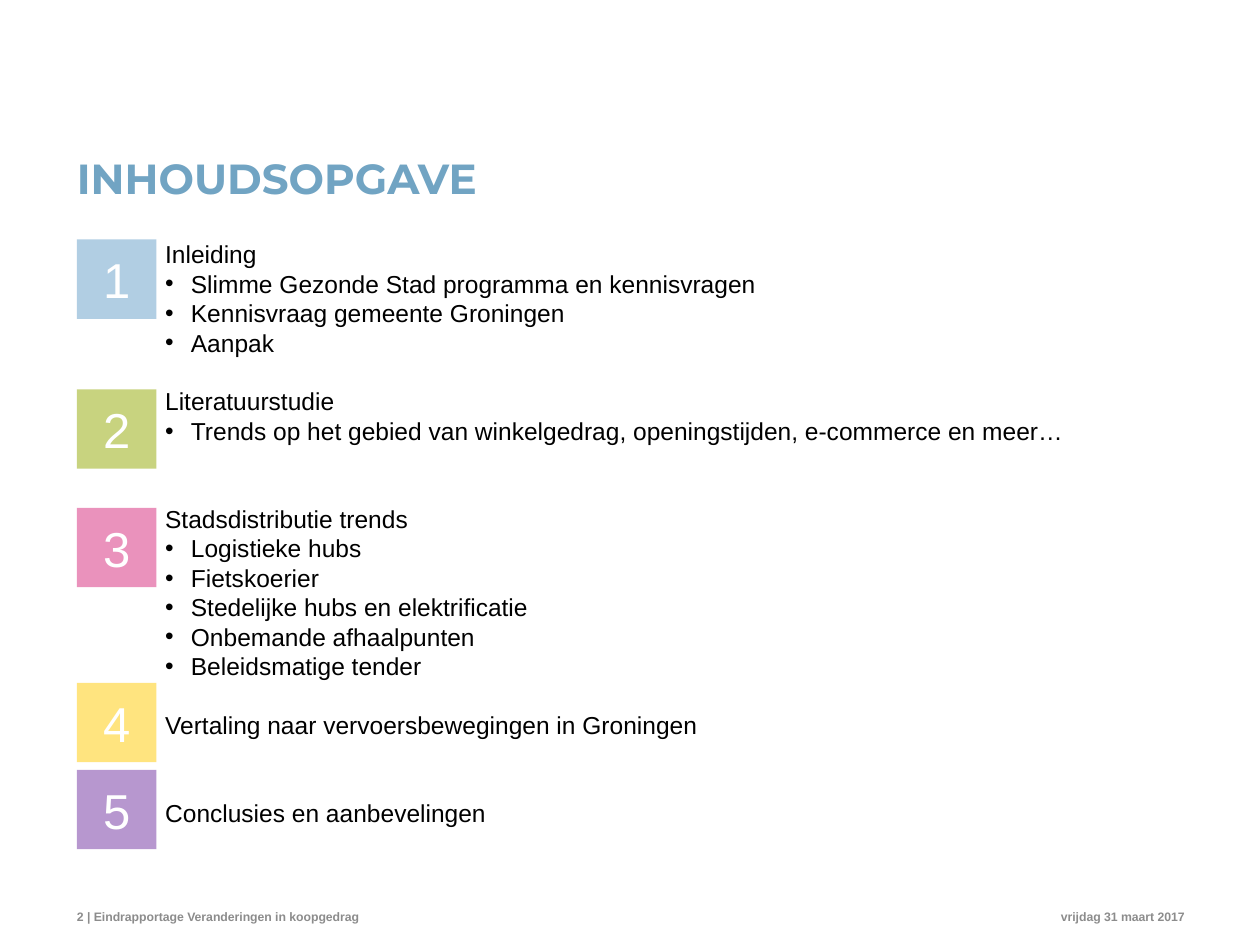
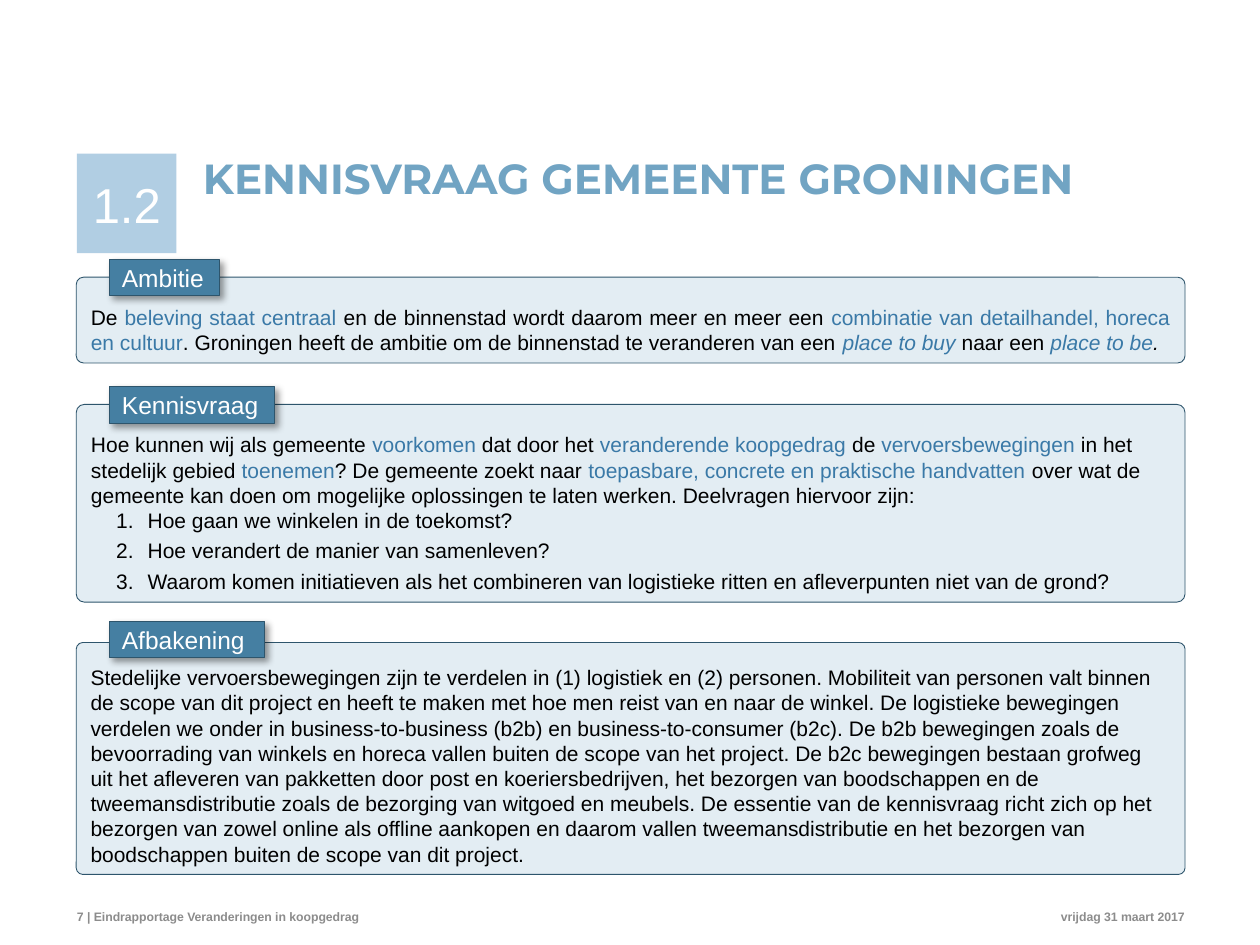
from pptx import Presentation
from pptx.dml.color import RGBColor
from pptx.enum.shapes import MSO_SHAPE
from pptx.enum.text import MSO_ANCHOR, MSO_AUTO_SIZE, PP_ALIGN
from pptx.oxml import parse_xml
from pptx.oxml.ns import nsdecls, qn
from pptx.util import Pt
from lxml.etree import SubElement

INK = {
    "title": "71A4C3", "text": "000000", "accent": "3A79A7", "foot": "8C8C8C",
    "white": "FFFFFF", "panel": "E3EDF3", "label": "457FA2", "edge": "2E556C",
    "blue": "649EC9", "green": "93A800", "pink": "D6277A",
    "yellow": "FFCB00", "purple": "7030A0",
}
LEFT, WIDTH, TOP = 44, 633.6, 87.8
LEAD = 1.2  # line pitch as a multiple of the text size

# Chapter: colour, top of its square, empty lines above, heading, bullets
PARTS = [
    ("blue", 136.8, 0, "Inleiding",
     ["Slimme Gezonde Stad programma en kennisvragen",
      "Kennisvraag gemeente Groningen", "Aanpak"]),
    ("green", 222.5, 1, "Literatuurstudie",
     ["Trends op het gebied van winkelgedrag, openingstijden, "
      "e-commerce en meer…"]),
    ("pink", 290.2, 2, "Stadsdistributie trends",
     ["Logistieke hubs", "Fietskoerier", "Stedelijke hubs en elektrificatie",
      "Onbemande afhaalpunten", "Beleidsmatige tender"]),
    ("yellow", 390.2, 1, "Vertaling naar vervoersbewegingen in Groningen", []),
    ("purple", 439.9, 2, "Conclusies en aanbevelingen", []),
]

# Sentences that set the scope of the project
SCOPE = [
    "Stedelijke vervoersbewegingen zijn te verdelen in (1) logistiek en (2) "
    "personen.",
    "Mobiliteit van personen valt binnen de scope van dit project en heeft te "
    "maken met hoe men reist van en naar de winkel.",
    "De logistieke bewegingen verdelen we onder in business-to-business (b2b) "
    "en business-to-consumer (b2c).",
    "De b2b bewegingen zoals de bevoorrading van winkels en horeca vallen "
    "buiten de scope van het project.",
    "De b2c bewegingen bestaan grofweg uit het afleveren van pakketten door "
    "post en koeriersbedrijven, het bezorgen van boodschappen en de "
    "tweemansdistributie zoals de bezorging van witgoed en meubels.",
    "De essentie van de kennisvraag richt zich op het bezorgen van zowel online "
    "als offline aankopen en daarom vallen tweemansdistributie en het bezorgen "
    "van boodschappen buiten de scope van dit project.",
]

# Panel: label, label width, label top, top, height, corner, align, text, questions
# In the text, | switches the accent colour on and off and ~ marks italics.
PANELS = [
    ("Ambitie", 62.6, 148.1, 158.4, 49, 0.085, PP_ALIGN.JUSTIFY,
     "De |beleving staat centraal |en de binnenstad wordt daarom meer en meer "
     "een |combinatie van detailhandel, horeca en cultuur|. Groningen heeft de "
     "ambitie om de binnenstad te veranderen van een |~place to buy |naar een "
     "|~place to be|~.", []),
    ("Kennisvraag", 94.3, 221, 231.1, 113, 0.041, PP_ALIGN.LEFT,
     "Hoe kunnen wij als gemeente |voorkomen| dat door het |veranderende "
     "koopgedrag |de |vervoersbewegingen| in het stedelijk gebied |toenemen|? "
     "De gemeente zoekt naar |toepasbare, concrete en praktische handvatten "
     "|over wat de gemeente kan doen om mogelijke oplossingen te laten werken. "
     "Deelvragen hiervoor zijn:",
     ["Hoe gaan we winkelen in de toekomst?",
      "Hoe verandert de manier van samenleven?",
      "Waarom komen initiatieven als het combineren van logistieke ritten en "
      "afleverpunten niet van de grond?"]),
    ("Afbakening", 88.6, 355, 367.2, 132.5, 0.028, PP_ALIGN.LEFT,
     " ".join(SCOPE), []),
]


def paint(name):
    return RGBColor.from_string(INK[name])


def style(run, size, ink="text", bold=False, slant=False, face="Arial"):
    font = run.font
    font.name, font.size, font.bold, font.italic = face, Pt(size), bold, slant
    font.color.rgb = paint(ink)


def write(para, text, size, ink="text", align=PP_ALIGN.LEFT, **look):
    para.text = text
    para.alignment = align
    for run in para.runs:
        style(run, size, ink, **look)


def next_para(frame):
    first = frame.paragraphs[0]
    return frame.add_paragraph() if first.runs else first


def mark(para, left, hang, tag, **attrs):
    """Give a paragraph a bullet or number with a hanging indent."""
    props = para._p.get_or_add_pPr()
    props.set("marL", str(Pt(left)))
    props.set("indent", str(-Pt(hang)))
    SubElement(props, qn("a:buFont"), typeface="Arial")
    SubElement(props, qn(tag), **attrs)


def plain(frame, anchor=MSO_ANCHOR.TOP):
    """Strip the margins of a text frame."""
    frame.margin_left = frame.margin_right = 0
    frame.margin_top = frame.margin_bottom = 0
    frame.word_wrap = True
    frame.auto_size = MSO_AUTO_SIZE.NONE
    frame.vertical_anchor = anchor


def text_box(slide, left, top, width, height, anchor=MSO_ANCHOR.TOP):
    box = slide.shapes.add_textbox(Pt(left), Pt(top), Pt(width), Pt(height))
    plain(box.text_frame, anchor)
    return box.text_frame


def block(shapes, kind, left, top, width, height, fill, edge=None):
    shape = shapes.add_shape(kind, Pt(left), Pt(top), Pt(width), Pt(height))
    shape.shadow.inherit = False
    shape.fill.solid()
    shape.fill.fore_color.rgb = paint(fill)
    if edge:
        shape.line.color.rgb = paint(edge)
        shape.line.width = Pt(0.5)
    else:
        shape.line.fill.background()
    shape.text_frame.word_wrap = True
    return shape


def add_slide(deck, title, page, inset=0):
    """Start a slide with its title and footer."""
    slide = deck.slides.add_slide(deck.slide_layouts[5])
    head = slide.shapes.title
    head.left, head.top = Pt(LEFT), Pt(TOP)
    head.width, head.height = Pt(WIDTH), Pt(57)
    plain(head.text_frame)
    head.text_frame.margin_left = Pt(inset)
    para = head.text_frame.paragraphs[0]
    write(para, title, 24, "title", bold=True, face="Montserrat")
    para.line_spacing = Pt(28)

    foot = f"{page} | Eindrapportage Veranderingen in koopgedrag"
    for left, width, text, align in (
            (LEFT, 340, foot, PP_ALIGN.LEFT),
            (509, 168, "vrijdag 31 maart 2017", PP_ALIGN.RIGHT)):
        frame = text_box(slide, left, 514, width, 13.7, MSO_ANCHOR.BOTTOM)
        write(frame.paragraphs[0], text, 7, "foot", align, bold=True)
    return slide


def badge(slide, text, top, side, fill):
    """Draw a half transparent square with a chapter number."""
    shape = block(slide.shapes, MSO_SHAPE.RECTANGLE, LEFT, top, side, side, fill)
    tint = shape._element.spPr.find(qn("a:solidFill"))[0]
    SubElement(tint, qn("a:alpha"), val="50000")
    frame = shape.text_frame
    frame.margin_left = frame.margin_right = 0
    frame.vertical_anchor = MSO_ANCHOR.MIDDLE
    write(frame.paragraphs[0], text, 28, "white", PP_ALIGN.CENTER)


def contents(slide, size=14):
    """List the chapters with their bullets and numbered squares."""
    frame = text_box(slide, 94.4, 136.8, 524, 344)
    pitch = size * LEAD
    for num, (fill, top, gap, name, items) in enumerate(PARTS, 1):
        badge(slide, str(num), top, 45.4, fill)
        for row, text in enumerate([name] + items):
            para = next_para(frame)
            if row:
                mark(para, 14.7, 14.7, "a:buChar", char="•")
            elif gap:
                para.space_before = Pt(gap * pitch)
            para.line_spacing = Pt(pitch)
            write(para, text, size)


def rich(para, text, size, align):
    """Write a paragraph with accent and italic runs."""
    para.alignment = align
    for num, part in enumerate(text.split("|")):
        run = para.add_run()
        run.text = part.removeprefix("~")
        style(run, size, "accent" if num % 2 else "text",
              slant=part.startswith("~"))


def drop_shadow(shape):
    effects = shape._element.spPr.find(qn("a:effectLst"))
    effects.append(parse_xml(
        f'<a:outerShdw {nsdecls("a")} blurRad="{Pt(4)}" dist="{Pt(3)}" '
        'dir="2700000" algn="tl" rotWithShape="0"><a:srgbClr val="000000">'
        '<a:alpha val="40000"/></a:srgbClr></a:outerShdw>'))


def panel(slide, name, span, tab, top, height, bend, align, text, items,
          size=12):
    """Draw a rounded panel with a label on its upper edge."""
    shapes = slide.shapes.add_group_shape().shapes
    body = block(shapes, MSO_SHAPE.ROUNDED_RECTANGLE, 43.6, top, WIDTH, height,
                 "panel", "edge")
    body.adjustments[0] = bend
    frame = body.text_frame
    frame.vertical_anchor = MSO_ANCHOR.BOTTOM
    rich(frame.paragraphs[0], text, size, align)
    for item in items:
        para = next_para(frame)
        para.level = 1
        mark(para, 32.4, 18, "a:buAutoNum", type="arabicPeriod")
        para.space_after = Pt(3)
        write(para, item, size)
    for para in frame.paragraphs:
        para.line_spacing = Pt(size * LEAD)

    label = block(shapes, MSO_SHAPE.RECTANGLE, 62.6, tab, span, 20.9,
                  "label", "edge")
    drop_shadow(label)
    label.text_frame.vertical_anchor = MSO_ANCHOR.MIDDLE
    write(label.text_frame.paragraphs[0], name, 14, "white")


def main():
    deck = Presentation()
    deck.slide_width, deck.slide_height = Pt(720), Pt(540)

    # Table of contents
    contents(add_slide(deck, "INHOUDSOPGAVE", 2))

    # Research question
    slide = add_slide(deck, "KENNISVRAAG GEMEENTE GRONINGEN", 7, inset=72)
    for parts in PANELS:
        panel(slide, *parts)
    badge(slide, "1.2", TOP, 56.9, "blue")

    deck.save("out.pptx")


if __name__ == "__main__":
    main()
